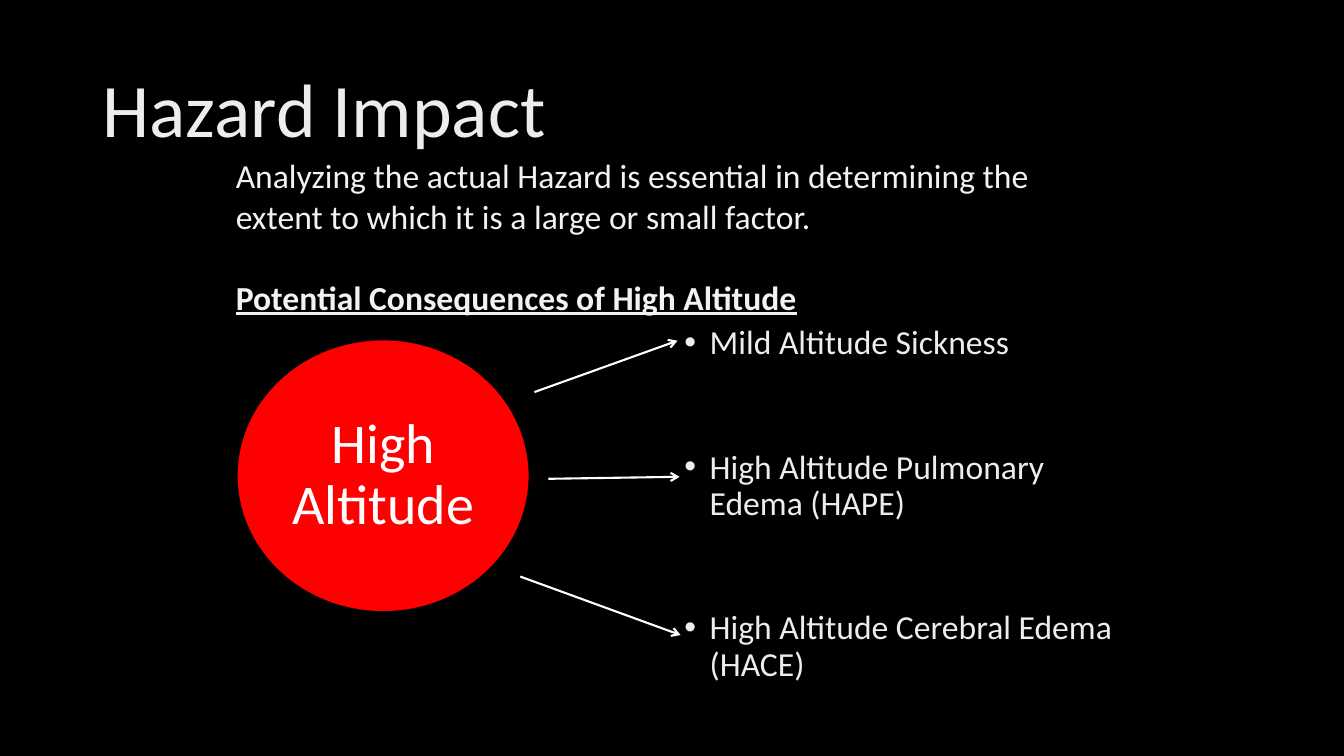
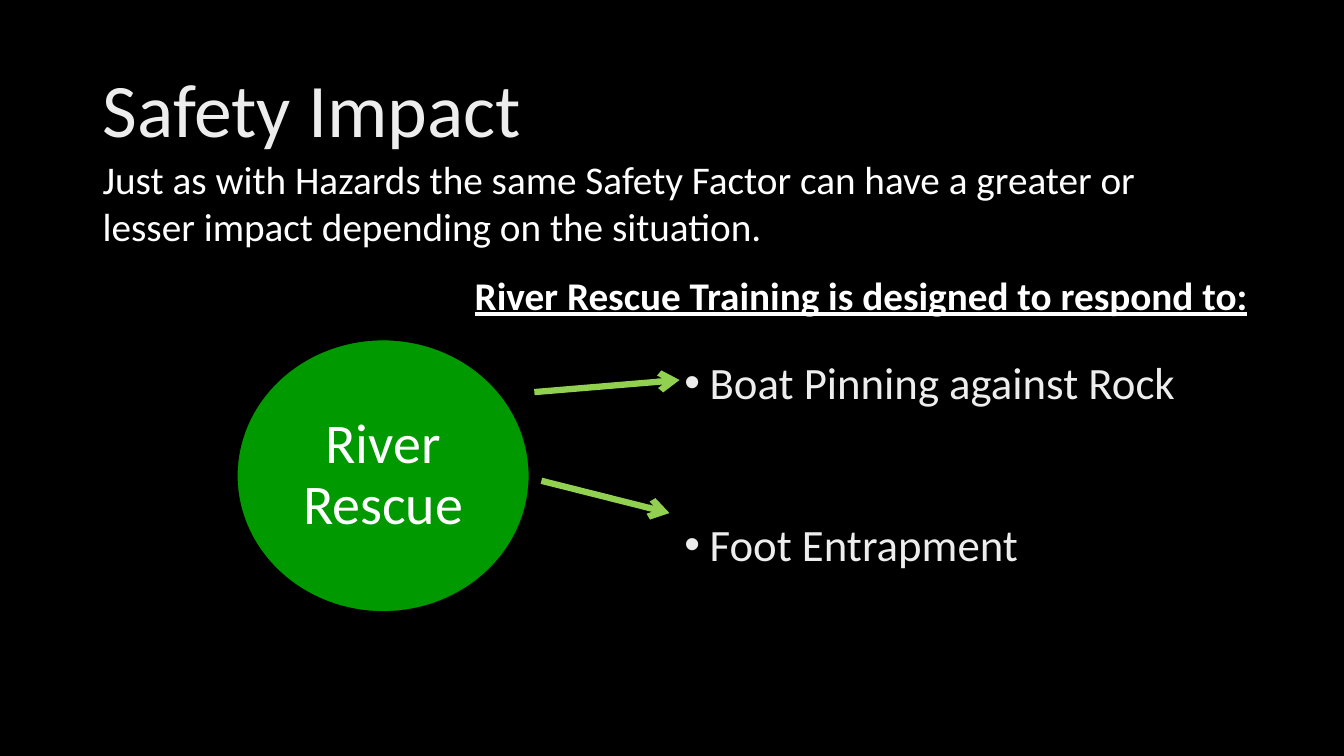
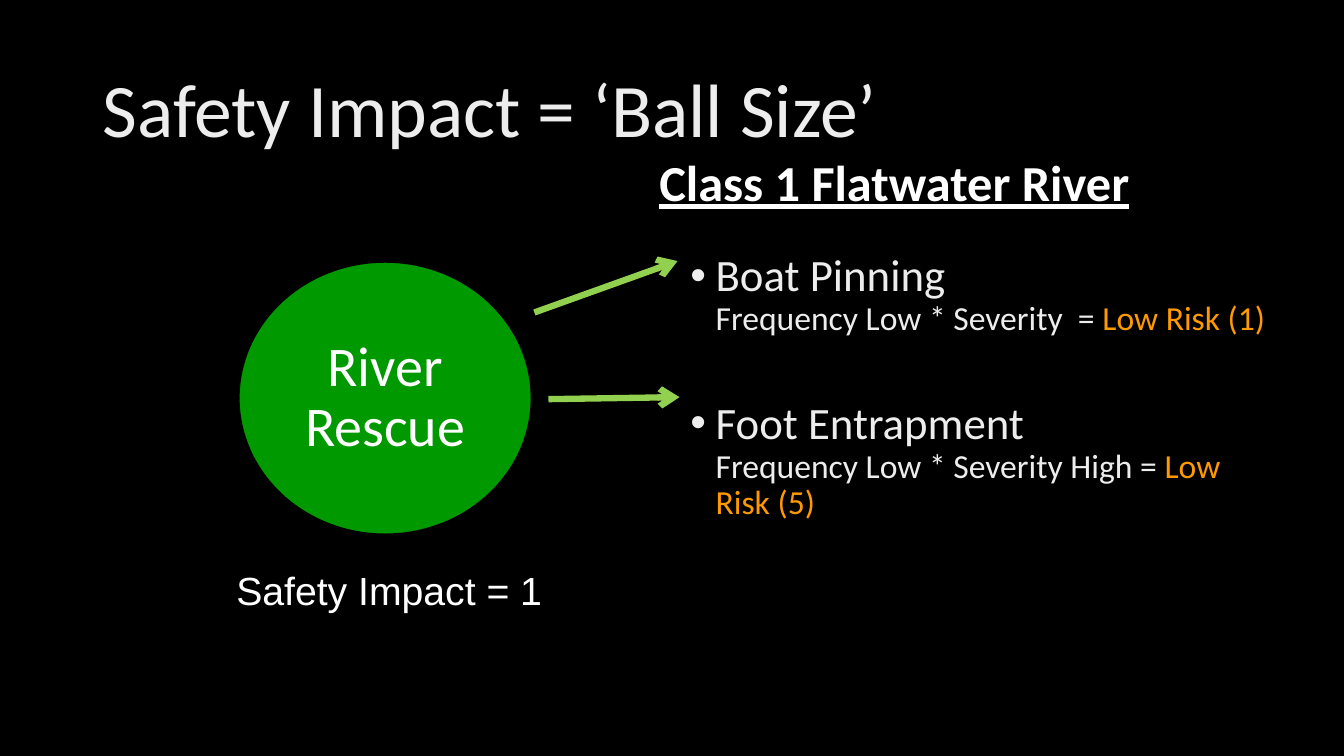
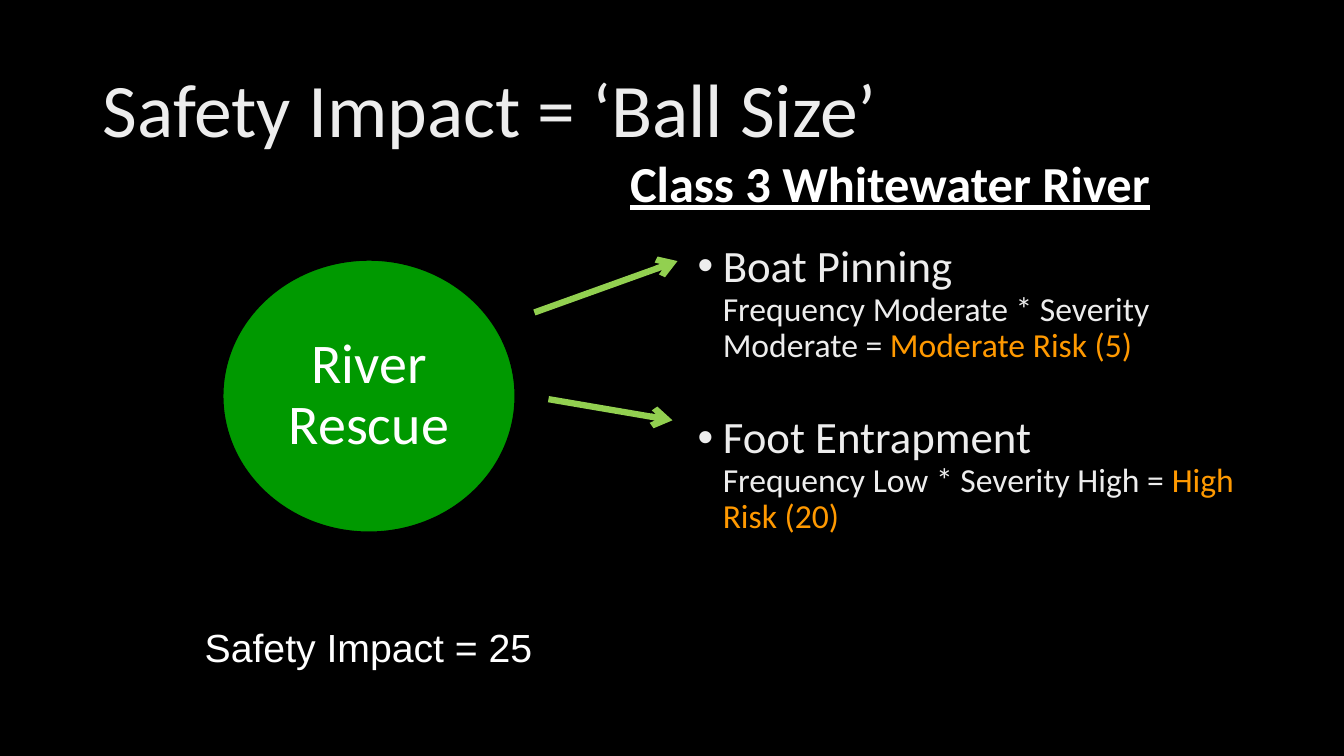
from lxml import etree
from pptx import Presentation
from pptx.dml.color import RGBColor
from pptx.enum.shapes import MSO_CONNECTOR, MSO_SHAPE
from pptx.enum.text import MSO_ANCHOR, PP_ALIGN
from pptx.oxml.ns import qn
from pptx.util import Inches, Pt

OVAL = MSO_SHAPE.OVAL
LINE = MSO_CONNECTOR.STRAIGHT
MIDDLE, TOP = MSO_ANCHOR.MIDDLE, MSO_ANCHOR.TOP
CENTER = PP_ALIGN.CENTER

BLACK, WHITE, SOFT, PALE = "000000", "FFFFFF", "EDEDED", "F2F2F2"
RED, GREEN, LIME, ORANGE = "FF0000", "009900", "92D050", "FF9900"

TITLE = {"size": 54, "color": SOFT}
LABEL = {"size": 40, "color": WHITE}
LEAD = {"size": 28, "color": WHITE}
NOTE = {"size": 24, "color": SOFT}
RISK = {"size": 24, "color": ORANGE}
ITEM = {"size": 32, "color": SOFT}
HEAD = {"size": 36, "color": WHITE, "bold": True, "underline": True}
IMPACT = {"size": 28, "color": WHITE, "name": "Arial"}


def rgb(code):
    return RGBColor.from_string(code)


def style(font, look):
    for key, value in {"name": "Calibri", **look}.items():
        if key == "color":
            font.color.rgb = rgb(value)
        else:
            setattr(font, key, Pt(value) if key == "size" else value)


def add_run(para, words, look):
    run = para.add_run()
    run.text = words
    style(run.font, look)


def add_box(slide, area, anchor=TOP):
    frame = slide.shapes.add_textbox(*map(Inches, area)).text_frame
    frame.word_wrap = True
    frame.vertical_anchor = anchor
    return frame


def add_text(slide, area, words, look, align=None):
    frame = add_box(slide, area)
    para = frame.paragraphs[0]
    para.alignment = align
    add_run(para, words, look)
    return frame


def add_slide(deck, title):
    slide = deck.slides.add_slide(deck.slide_layouts[6])
    fill = slide.background.fill
    fill.solid()
    fill.fore_color.rgb = rgb(BLACK)
    para = add_box(slide, (0.92, 0.4, 11.5, 1.45), MIDDLE).paragraphs[0]
    para.line_spacing = 0.9
    add_run(para, title, TITLE)
    return slide


def add_ball(slide, left, top, words, color):
    ball = slide.shapes.add_shape(OVAL, *map(Inches, (left, top, 2.9, 2.7)))
    ball.shadow.inherit = False
    ball.fill.solid()
    ball.fill.fore_color.rgb = rgb(color)
    ball.line.color.rgb = rgb(BLACK)
    ball.line.width = Pt(1)
    frame = ball.text_frame
    frame.word_wrap = True
    frame.vertical_anchor = MIDDLE
    for side in ("left", "top", "right", "bottom"):
        setattr(frame, "margin_" + side, Inches(0.07))
    para = frame.paragraphs[0]
    para.alignment = CENTER
    para.line_spacing = 0.9
    add_run(para, words, LABEL)


def add_arrow(slide, ends, color=LIME, width=4.5):
    arrow = slide.shapes.add_connector(LINE, *map(Inches, ends))
    arrow.line.color.rgb = rgb(color)
    arrow.line.width = Pt(width)
    etree.SubElement(arrow.line._get_or_add_ln(), qn("a:tailEnd"), type="arrow")
    etree.SubElement(arrow._element.spPr, qn("a:effectLst"))


def add_list(slide, area, items, look, gap):
    """Bulleted items, each a heading and an optional (note, risk) line."""
    frame = add_box(slide, area)
    for i, (head, *rest) in enumerate(items):
        para = frame.add_paragraph() if i else frame.paragraphs[0]
        para.line_spacing = 0.9
        if i:
            para.space_before = Pt(gap)
        props = para._p.get_or_add_pPr()
        props.set("marL", str(Inches(0.25)))
        props.set("indent", str(-Inches(0.25)))
        etree.SubElement(props, qn("a:buFont"), typeface="Arial")
        etree.SubElement(props, qn("a:buChar"), char="•")
        add_run(para, head, look)
        if rest:
            para.add_line_break()
            for words, part in zip(rest, (NOTE, RISK)):
                add_run(para, words, part)


def hazard(deck):
    slide = add_slide(deck, "Hazard Impact")
    add_list(slide, (6.69, 3.18, 4.51, 3.95),
             [("Mild Altitude Sickness",),
              ("High Altitude Pulmonary Edema (HAPE)",),
              ("High Altitude Cerebral Edema (HACE)",)], NOTE, 63)
    add_ball(slide, 2.35, 3.37, "High Altitude", RED)
    for ends in ((5.3, 3.89, 6.72, 3.38), (5.44, 4.75, 6.74, 4.73),
                 (5.16, 5.72, 6.75, 6.3)):
        add_arrow(slide, ends, WHITE, 1.5)
    look = {"size": 24, "color": PALE}
    frame = add_text(slide, (2.24, 1.49, 8.52, 1.72),
                     "Analyzing the actual Hazard is essential in determining "
                     "the extent to which it is a large or small factor.", look)
    para = frame.add_paragraph()
    para.space_before = Pt(29)
    add_run(para, "Potential Consequences of High Altitude",
            {**look, "bold": True, "underline": True})


def safety(deck):
    slide = add_slide(deck, "Safety Impact")
    add_list(slide, (6.69, 3.53, 5.4, 3.57),
             [("Boat Pinning against Rock",), ("Foot Entrapment",)], ITEM, 81)
    add_ball(slide, 2.35, 3.37, "River Rescue", GREEN)
    add_arrow(slide, (5.3, 3.89, 6.74, 3.77))
    add_arrow(slide, (5.37, 4.77, 6.64, 5.09))
    add_text(slide, (0.92, 1.49, 11.38, 1.04),
             "Just as with Hazards the same Safety Factor can have a greater or "
             "lesser impact depending on the situation.", LEAD)
    add_text(slide, (4.61, 2.64, 8.22, 0.57),
             "River Rescue Training is designed to respond to:",
             {**HEAD, "size": 28})


def river(deck, head, area, ball, low, items, body, gap, impact, spot):
    """A river class with the risks that set its safety impact."""
    slide = add_slide(deck, "Safety Impact = ‘Ball Size’")
    add_list(slide, body, items, ITEM, gap)
    add_arrow(slide, (5.3, 3.1, 6.72, 2.59))
    add_arrow(slide, (5.44, 3.96, *low))
    add_text(slide, area, head, HEAD)
    add_text(slide, spot, f"Safety Impact = {impact}", IMPACT, CENTER)
    add_ball(slide, *ball, "River Rescue", GREEN)


def main():
    deck = Presentation()
    deck.slide_width, deck.slide_height = Inches(13.33), Inches(7.5)
    hazard(deck)
    safety(deck)
    river(deck, "Class 1 Flatwater River", (6.44, 1.45, 6.71, 0.71),
          ball=(2.37, 2.6), low=(6.74, 3.94),
          items=[("Boat Pinning", "Frequency Low * Severity  = ",
                  "Low Risk (1)"),
                 ("Foot Entrapment", "Frequency Low * Severity High = ",
                  "Low Risk (5)")],
          body=(6.75, 2.46, 6, 4.59), gap=45,
          impact=1, spot=(2.15, 5.57, 3.42, 0.57))
    river(deck, "Class 3 Whitewater River", (6.15, 1.46, 7.11, 0.71),
          ball=(2.21, 2.58), low=(6.67, 4.17),
          items=[("Boat Pinning", "Frequency Moderate * Severity Moderate = ",
                  "Moderate Risk (5)"),
                 ("Foot Entrapment", "Frequency Low * Severity High = ",
                  "High Risk (20)")],
          body=(6.82, 2.37, 6.01, 4.75), gap=36,
          impact=25, spot=(1.8, 6.13, 3.71, 0.57))
    deck.save("out.pptx")


if __name__ == "__main__":
    main()
